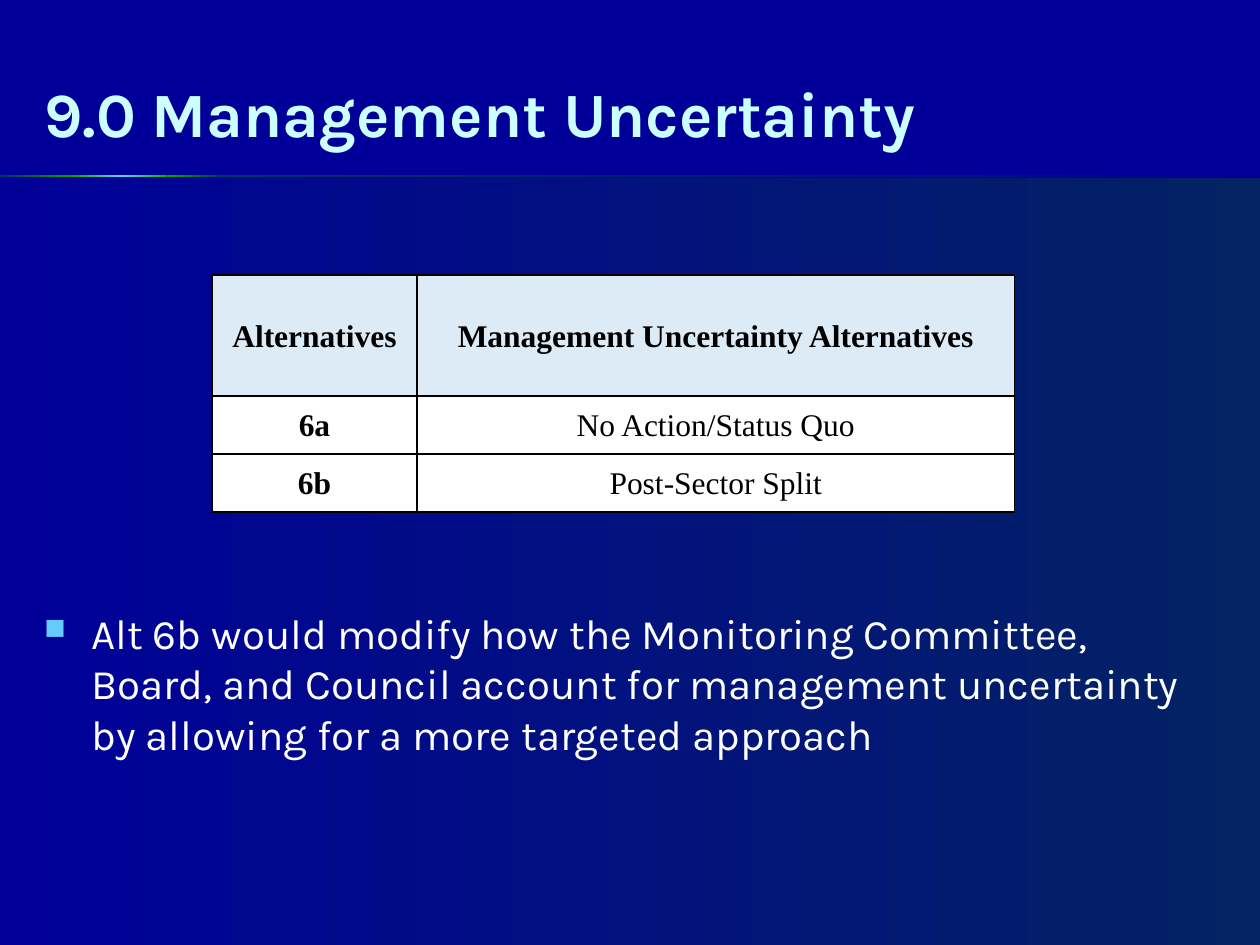
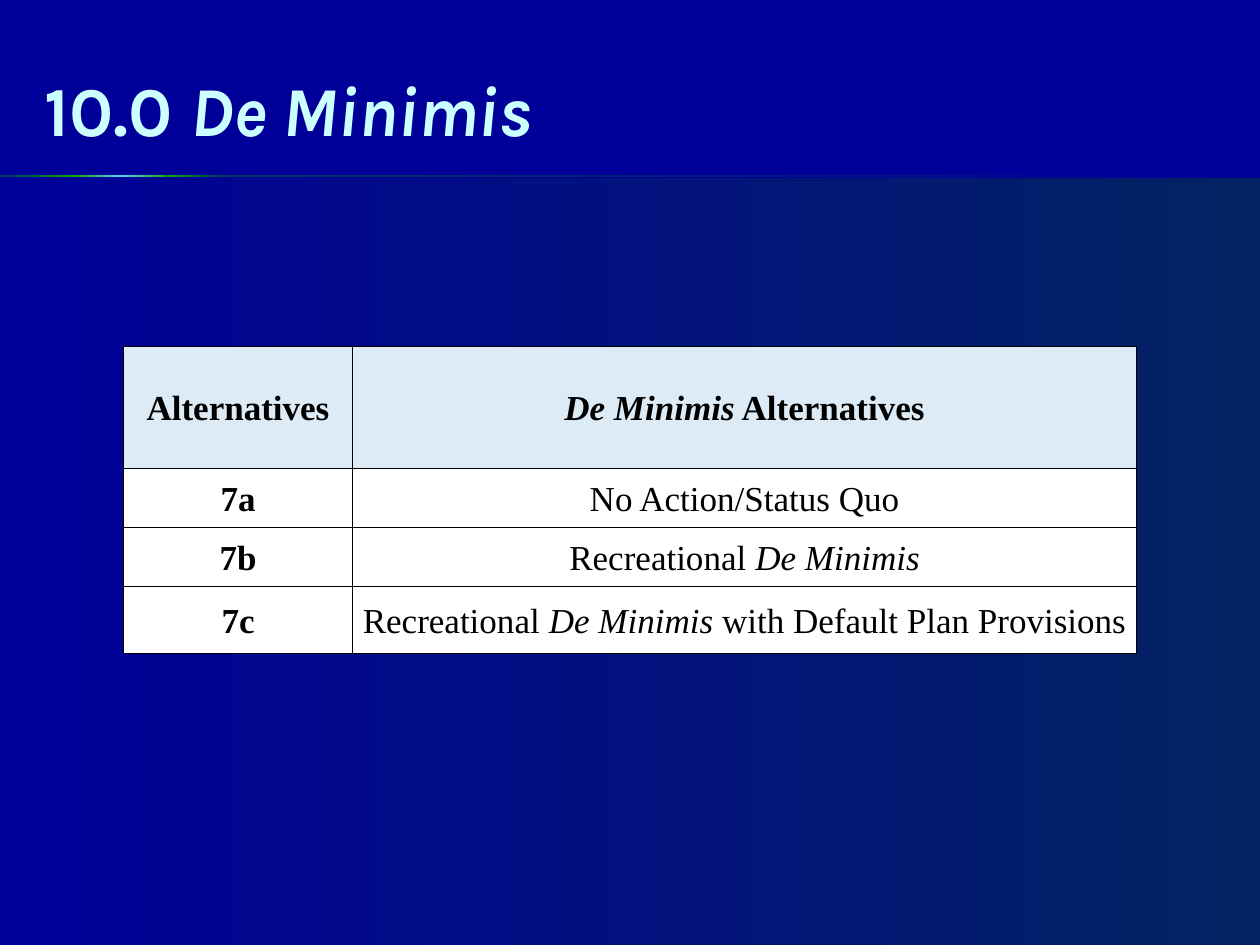
from lxml import etree
from pptx import Presentation
from pptx.dml.color import RGBColor
from pptx.enum import shapes, text
from pptx.oxml import ns
from pptx.util import Cm, Pt

NAVY = RGBColor(0x00, 0x00, 0x99)
DUSK = RGBColor(0x03, 0x23, 0x63)
TEAL = RGBColor(0x00, 0x33, 0x66)
GREEN = RGBColor(0x00, 0xB0, 0x00)
SKY = RGBColor(0x66, 0xCC, 0xFF)
ICE = RGBColor(0xCC, 0xFF, 0xFF)
PALE = RGBColor(0xDD, 0xEB, 0xF7)
WHITE = RGBColor(0xFF, 0xFF, 0xFF)
BLACK = RGBColor(0x00, 0x00, 0x00)
SANS, SERIF = "Karla", "Times New Roman"

WIDE, HIGH = 25.4, 19.05
RULE, BAND = 3.53, 3.58

# Left, top, right, bottom and the colours from left to right
STRIPS = [
    (0, BAND, WIDE, HIGH, [NAVY, DUSK]),
    (4.5, RULE, WIDE, BAND, [TEAL, NAVY]),
    (0, RULE, 1.55, BAND, [TEAL, GREEN]),
    (3.38, RULE, 4.5, BAND, [GREEN, TEAL]),
    (1.52, RULE, 3.38, BAND, [GREEN, SKY, GREEN]),
]

# Underscores enclose italic words
PAGES = [
    dict(
        title="9.0 Management Uncertainty", size=36,
        left=4.27, top=5.54, cols=[4.14, 12.04], rows=[2.44, 1.17, 1.17], font=18,
        cells=[
            ("Alternatives", "Management Uncertainty Alternatives"),
            ("6a", "No Action/Status Quo"),
            ("6b", "Post-Sector Split"),
        ],
        note="Alt 6b would modify how the Monitoring Committee, Board, and Council "
             "account for management uncertainty by allowing for a more targeted approach",
    ),
    dict(
        title="10.0 _De Minimis_", size=40,
        left=2.49, top=6.98, cols=[4.62, 15.8], rows=[2.46, 1.19, 1.19, 1.35], font=20,
        cells=[
            ("Alternatives", "_De Minimis_ Alternatives"),
            ("7a", "No Action/Status Quo"),
            ("7b", "Recreational _De Minimis_"),
            ("7c", "Recreational _De Minimis_ with Default Plan Provisions"),
        ],
        note=None,
    ),
]


def write(para, words, size, face, tint, bold=False):
    """Add words run by run, with those between underscores in italics."""
    for n, part in enumerate(words.split("_")):
        if part:
            run = para.add_run()
            run.text = part
            font = run.font
            font.size, font.name, font.bold = Pt(size), face, bold
            font.italic = n % 2 == 1
            font.color.rgb = tint


def add_box(slide, top, height, anchor):
    """Add a wrapped text box as wide as the margins allow."""
    box = slide.shapes.add_textbox(Cm(0.64), Cm(top), Cm(24.13), Cm(height))
    frame = box.text_frame
    frame.word_wrap = True
    frame.vertical_anchor = anchor
    return frame.paragraphs[0]


deck = Presentation()
deck.slide_width, deck.slide_height = Cm(WIDE), Cm(HIGH)

for page in PAGES:
    slide = deck.slides.add_slide(deck.slide_layouts[6])
    back = slide.background.fill
    back.solid()
    back.fore_color.rgb = NAVY

    for left, top, right, foot, tints in STRIPS:
        strip = slide.shapes.add_shape(
            shapes.MSO_SHAPE.RECTANGLE, Cm(left), Cm(top), Cm(right - left), Cm(foot - top))
        strip.shadow.inherit = False
        strip.line.fill.background()
        strip.fill.gradient()
        strip.fill.gradient_angle = 0
        stops = strip._element.spPr.find(".//" + ns.qn("a:gsLst"))
        for stop in list(stops):
            stops.remove(stop)
        for n, tint in enumerate(tints):
            place = str(100000 * n // (len(tints) - 1))
            stop = etree.SubElement(stops, ns.qn("a:gs"), pos=place)
            etree.SubElement(stop, ns.qn("a:srgbClr"), val=str(tint))

    head = add_box(slide, 0.36, 2.79, text.MSO_ANCHOR.BOTTOM)
    write(head, page["title"], page["size"], SANS, ICE, True)

    if page["note"]:
        note = add_box(slide, 12.12, 4.8, text.MSO_ANCHOR.TOP)
        props = note._p.get_or_add_pPr()
        props.set("marL", str(Cm(0.95)))
        props.set("indent", str(Cm(-0.95)))
        tint = etree.SubElement(props, ns.qn("a:buClr"))
        etree.SubElement(tint, ns.qn("a:srgbClr"), val=str(SKY))
        etree.SubElement(props, ns.qn("a:buSzPct"), val="70000")
        etree.SubElement(props, ns.qn("a:buChar"), char="■")
        write(note, page["note"], 24, SANS, WHITE)

    cols, rows = page["cols"], page["rows"]
    table = slide.shapes.add_table(
        len(rows), len(cols), Cm(page["left"]), Cm(page["top"]),
        Cm(sum(cols)), Cm(sum(rows))).table
    for col, width in zip(table.columns, cols):
        col.width = Cm(width)
    for row, height in zip(table.rows, rows):
        row.height = Cm(height)

    for r, line in enumerate(page["cells"]):
        for c, words in enumerate(line):
            cell = table.cell(r, c)
            cell.margin_left = cell.margin_right = Cm(0.17)
            cell.margin_top = cell.margin_bottom = 0
            cell.vertical_anchor = text.MSO_ANCHOR.MIDDLE
            cell.fill.solid()
            cell.fill.fore_color.rgb = PALE if r == 0 else WHITE
            props = cell._tc.get_or_add_tcPr()
            for n, side in enumerate(("lnL", "lnR", "lnT", "lnB")):
                edge = etree.Element(ns.qn("a:" + side), w=str(Pt(1)))
                ink = etree.SubElement(edge, ns.qn("a:solidFill"))
                etree.SubElement(ink, ns.qn("a:srgbClr"), val=str(BLACK))
                props.insert(n, edge)
            para = cell.text_frame.paragraphs[0]
            para.alignment = text.PP_ALIGN.CENTER
            para.line_spacing = 1.07
            write(para, words, page["font"], SERIF, BLACK, r == 0 or c == 0)

deck.save("out.pptx")
